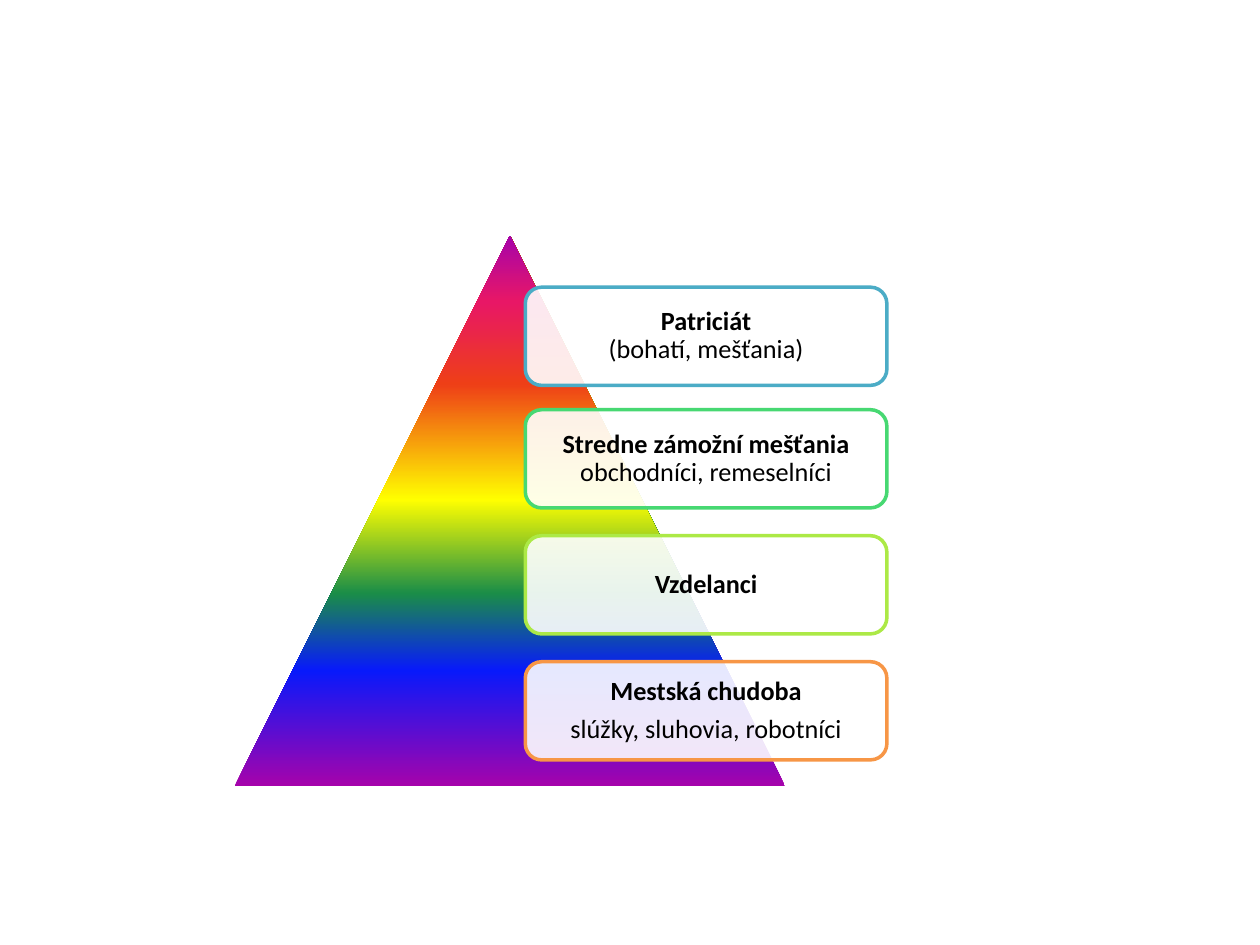
from copy import deepcopy
from lxml import etree
from pptx import Presentation
from pptx import util as u
from pptx.dml.color import RGBColor
from pptx.enum import shapes, text
from pptx.oxml.ns import qn

COLOURS = {
    "white": "FFFFFF", "black": "000000",
    "blue": "4BACC6", "green": "47D872", "lime": "ACE946", "orange": "F79646",
}
RAINBOW = [(0, "A603AB"), (21, "0819FB"), (35, "1A8D48"), (52, "FFFF00"),
           (73, "EE3F17"), (88, "E81766"), (100, "A603AB")]
CLASSES = [
    (5.79, "blue", "Patriciát\v(bohatí, mešťania)"),
    (8.26, "green", "Stredne zámožní mešťania\vobchodníci, remeselníci"),
    (10.8, "lime", "Vzdelanci"),
    (13.34, "orange", "Mestská chudoba\nslúžky, sluhovia, robotníci"),
]

deck = Presentation()
deck.slide_width, deck.slide_height = u.Cm(25.4), u.Cm(19.05)
page = deck.slides.add_slide(deck.slide_layouts[6])

pyramid = page.shapes.add_shape(
    shapes.MSO_SHAPE.ISOSCELES_TRIANGLE, u.Cm(4.73), u.Cm(4.75), u.Cm(11.1), u.Cm(11.1))
pyramid.shadow.inherit = False
pyramid.line.fill.background()
pyramid.fill.gradient()
pyramid.fill.gradient_angle = 90
stops = pyramid._element.spPr.find(".//" + qn("a:gsLst"))
for stop in list(stops):
    stops.remove(stop)
for position, colour in RAINBOW:
    stop = etree.SubElement(stops, qn("a:gs"), pos=str(position * 1000))
    etree.SubElement(stop, qn("a:srgbClr"), val=colour)

for top, colour, label in CLASSES:
    box = page.shapes.add_shape(
        shapes.MSO_SHAPE.ROUNDED_RECTANGLE, u.Cm(10.59), u.Cm(top), u.Cm(7.29), u.Cm(1.98))
    box.shadow.inherit = False
    box.fill.solid()
    box.fill.fore_color.rgb = RGBColor.from_string(COLOURS["white"])
    tint = box._element.spPr.find(qn("a:solidFill")).find(qn("a:srgbClr"))
    etree.SubElement(tint, qn("a:alpha"), val="90000")
    box.line.color.rgb = RGBColor.from_string(COLOURS[colour])
    box.line.width = u.Pt(2)

    frame = box.text_frame
    frame.text = label
    frame.word_wrap = True
    frame.vertical_anchor = text.MSO_ANCHOR.MIDDLE
    frame.margin_left = frame.margin_right = u.Cm(0.25)
    frame.margin_top = frame.margin_bottom = u.Cm(0.25)
    for para in frame.paragraphs:
        para.alignment = text.PP_ALIGN.CENTER
        para.line_spacing = 0.9
        for span in para.runs:
            span.font.name = "Calibri"
            span.font.size = u.Pt(15)
            span.font.bold = False
            span.font.color.rgb = RGBColor.from_string(COLOURS["black"])
        for line_break in para._p.findall(qn("a:br")):
            line_break.append(deepcopy(para.runs[0]._r.rPr))
    for para in frame.paragraphs[:-1]:
        para.space_after = u.Pt(5.25)
    frame.paragraphs[0].runs[0].font.bold = True

deck.save("out.pptx")
